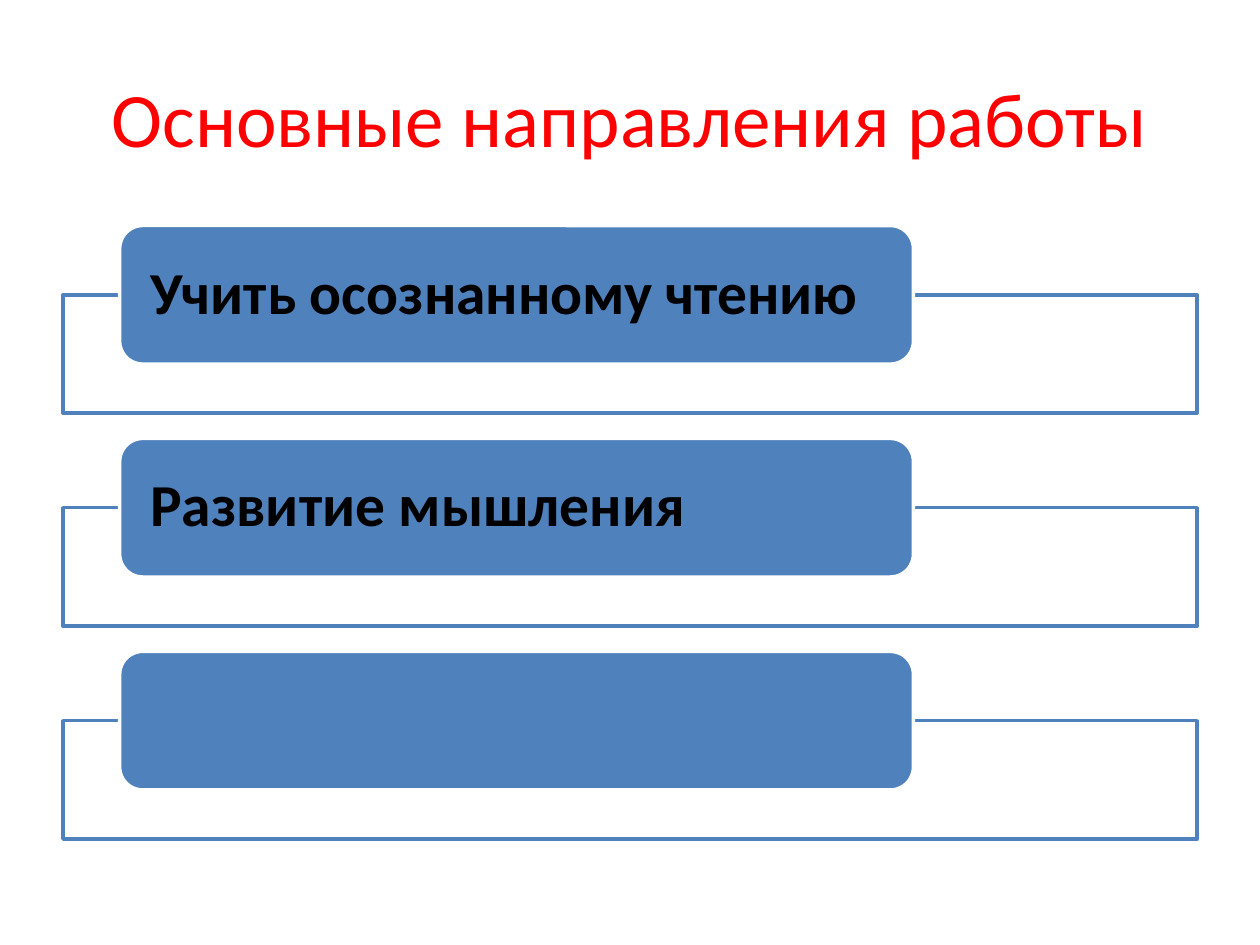
"""Build the slide on the main directions of work: a title above three tabbed frames."""
from dataclasses import dataclass

from lxml.etree import SubElement
from pptx import Presentation
from pptx.dml.color import RGBColor
from pptx.enum.shapes import MSO_SHAPE as Preset
from pptx.enum.text import MSO_ANCHOR as Anchor, PP_ALIGN as Align
from pptx.oxml.ns import qn
from pptx.shapes.autoshape import Shape
from pptx.slide import Slide
from pptx.text.text import TextFrame
from pptx.util import Emu, Inches, Pt

COLUMNS, ROWS = 100, 75
SLIDE_WIDTH, SLIDE_HEIGHT = Inches(10), Inches(7.5)


@dataclass(frozen=True)
class Theme:
    """Colours, font and sizes in points."""
    title: RGBColor = RGBColor(0xFF, 0x00, 0x00)
    label: RGBColor = RGBColor(0x00, 0x00, 0x00)
    accent: RGBColor = RGBColor(0x4F, 0x81, 0xBD)
    paper: RGBColor = RGBColor(0xFF, 0xFF, 0xFF)
    font: str = "Calibri"
    title_size: int = 44
    label_size: int = 34
    outline: int = 2
    frame_opacity: int = 90


@dataclass(frozen=True)
class Area:
    """A rectangle in grid columns and rows."""
    left: float
    top: float
    width: float
    height: float

    def emu(self) -> tuple[Emu, Emu, Emu, Emu]:
        """Convert the grid rectangle to slide lengths."""
        column, row = SLIDE_WIDTH / COLUMNS, SLIDE_HEIGHT / ROWS
        return (Emu(round(self.left * column)), Emu(round(self.top * row)),
                Emu(round(self.width * column)), Emu(round(self.height * row)))


@dataclass(frozen=True)
class Direction:
    """One direction of work and its place in the list."""
    position: int
    label: str

    @property
    def tab(self) -> Area:
        """Place the rounded tab."""
        return Area(9.5, 17.9 + self.position * 16.9, 63, 11)

    @property
    def frame(self) -> Area:
        """Place the frame, which starts halfway down the tab."""
        return Area(5, self.tab.top + self.tab.height / 2, 90, 9.4)


THEME = Theme()
DIRECTIONS = [Direction(position, label) for position, label in
              enumerate(("Учить осознанному чтению", "Развитие мышления", ""))]


def write(body: TextFrame, text: str, size: int, color: RGBColor, align: Align, bold: bool) -> None:
    """Write one vertically centred line of text."""
    body.word_wrap = True
    body.vertical_anchor = Anchor.MIDDLE
    line = body.paragraphs[0]
    line.alignment = align
    words = line.add_run()
    words.text = text
    words.font.name, words.font.size, words.font.bold = THEME.font, Pt(size), bold
    words.font.color.rgb = color


def draw_panel(slide: Slide, preset: Preset, area: Area, fill: RGBColor, outline: RGBColor) -> Shape:
    """Draw a filled, outlined panel without a shadow."""
    panel = slide.shapes.add_shape(preset, *area.emu())
    panel.shadow.inherit = False
    panel.fill.solid()
    panel.fill.fore_color.rgb = fill
    panel.line.color.rgb = outline
    panel.line.width = Pt(THEME.outline)
    return panel


def draw_direction(slide: Slide, direction: Direction) -> None:
    """Draw a direction as a translucent frame with a labelled tab over it."""
    frame = draw_panel(slide, Preset.RECTANGLE, direction.frame, THEME.paper, THEME.accent)
    paper = frame.fill._xPr.find(qn("a:solidFill"))[0]
    SubElement(paper, qn("a:alpha"), val=str(THEME.frame_opacity * 1000))
    tab = draw_panel(slide, Preset.ROUNDED_RECTANGLE, direction.tab, THEME.accent, THEME.paper)
    if direction.label:
        body = tab.text_frame
        body.margin_left = body.margin_right = Inches(0.19)
        body.margin_top = body.margin_bottom = 0
        write(body, direction.label, THEME.label_size, THEME.label, Align.LEFT, True)
        body.paragraphs[0].line_spacing = 0.9


def main() -> None:
    """Build and save the presentation."""
    deck = Presentation()
    deck.slide_width, deck.slide_height = SLIDE_WIDTH, SLIDE_HEIGHT
    slide = deck.slides.add_slide(deck.slide_layouts[6])
    title = slide.shapes.add_textbox(*Area(5, 3, 90, 12.5).emu())
    write(title.text_frame, "Основные направления работы", THEME.title_size,
          THEME.title, Align.CENTER, False)
    for direction in DIRECTIONS:
        draw_direction(slide, direction)
    deck.save("out.pptx")


if __name__ == "__main__":
    main()
